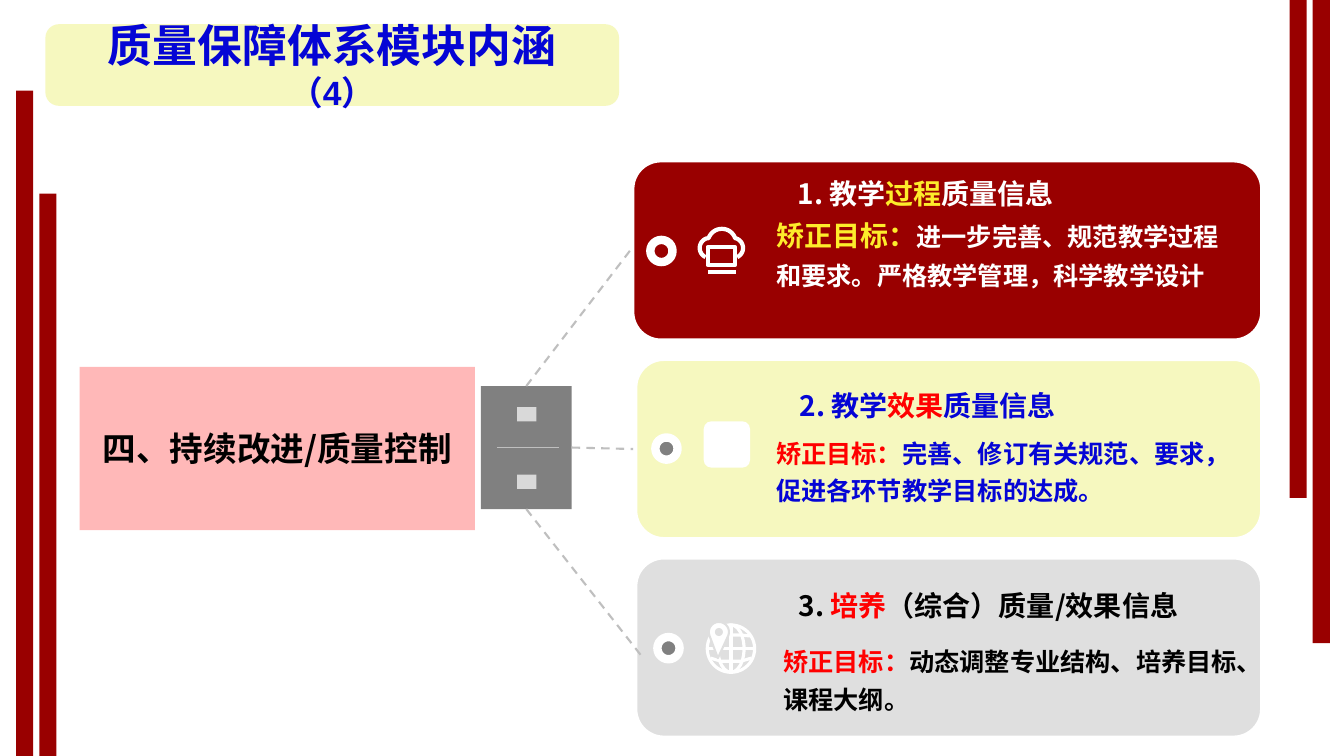
from math import cos, radians, sin

from lxml import etree
from pptx import Presentation
from pptx.dml.color import RGBColor
from pptx.enum.dml import MSO_LINE
from pptx.enum.shapes import MSO_CONNECTOR, MSO_SHAPE
from pptx.enum.text import MSO_ANCHOR, MSO_AUTO_SIZE, PP_ALIGN
from pptx.oxml.ns import qn
from pptx.util import Inches, Pt

RECT, ROUND, OVAL = MSO_SHAPE.RECTANGLE, MSO_SHAPE.ROUNDED_RECTANGLE, MSO_SHAPE.OVAL
STRAIGHT, DASH = MSO_CONNECTOR.STRAIGHT, MSO_LINE.DASH
MIDDLE, TOP, CENTER, LEFT = MSO_ANCHOR.MIDDLE, MSO_ANCHOR.TOP, PP_ALIGN.CENTER, PP_ALIGN.LEFT
FONT, TITLE_FONT = "Noto Sans CJK SC", "Arial"
WHITE, BLACK, RED, BLUE, YELLOW = "FFFFFF", "000000", "FF0000", "0505D5", "FDEC2B"
MAROON, CREAM, PINK, GREY, PALE, SILVER = "990000", "F6F8BF", "FFB8B8", "808080", "DFDFDF", "BFBFBF"

# Runs are (text, size, colour); boxes are (left, top, width, height) in inches
TITLE = [("质量保障体系模块内涵", 32, BLUE), ("（4）", 24, BLUE)]
TITLE_BOX = (0.45, 0.24, 5.69, 0.81)
TOPIC = [("四、持续改进/质量控制", 24, BLACK)]
SIDE_BARS = [(0.16, 0.9, 6.6), (0.39, 1.92, 5.58), (12.79, 0, 4.94), (13.02, 0, 6.38)]
CARDS = [
    dict(box=(6.25, 1.57, 6.29, 1.83), fill=MAROON, ring=(6.45, 2.38), dot=MAROON,
         head_box=(7.83, 1.62, 3.3, 0.59), body_box=(7.6, 2.04, 4.69, 0.9),
         head=[("1. 教学", 20, WHITE), ("过程", 20, YELLOW), ("质量信息", 20, WHITE)],
         body=[("矫正目标：", 20, YELLOW),
               ("进一步完善、规范教学过程和要求。严格教学管理，科学教学设计", 18, WHITE)]),
    dict(box=(6.28, 3.54, 6.26, 1.83), fill=CREAM, ring=(6.5, 4.34), dot=GREY,
         head_box=(7.85, 3.73, 3.3, 0.59), body_box=(7.6, 4.22, 4.94, 0.9),
         head=[("2. 教学", 20, BLUE), ("效果", 20, RED), ("质量信息", 20, BLUE)],
         body=[("矫正目标：", 18, RED),
               ("完善、修订有关规范、要求，促进各环节教学目标的达成。", 18, BLUE)]),
    dict(box=(6.28, 5.51, 6.26, 1.83), fill=PALE, ring=(6.52, 6.32), dot=GREY,
         head_box=(7.84, 5.71, 4.06, 0.59), body_box=(7.67, 6.29, 4.74, 0.9),
         head=[("3. ", 20, BLACK), ("培养", 20, RED), ("（综合）质量/效果信息", 20, BLACK)],
         body=[("矫正目标：", 18, RED), ("动态调整专业结构、培养目标、课程大纲。", 18, BLACK)]),
]

prs = Presentation()
prs.slide_width, prs.slide_height = Inches(13.33), Inches(7.5)
s = prs.slides.add_slide(prs.slide_layouts[5])


def rgb(value):
    return RGBColor.from_string(value)


def paint(shape, fill, line, width):
    shape.shadow.inherit = False
    if fill:
        shape.fill.solid()
        shape.fill.fore_color.rgb = rgb(fill)
    else:
        shape.fill.background()
    if line:
        shape.line.color.rgb = rgb(line)
        shape.line.width = Pt(width)
    else:
        shape.line.fill.background()
    return shape


def add_box(kind, box, fill=None, line=None, width=1):
    return paint(s.shapes.add_shape(kind, *map(Inches, box)), fill, line, width)


def add_path(points, fill=None, line=None, width=1, close=False):
    points = [(Inches(x), Inches(y)) for x, y in points]
    builder = s.shapes.build_freeform(*points[0])
    builder.add_line_segments(points[1:], close=close)
    return paint(builder.convert_to_shape(), fill, line, width)


def add_line(start, end, color, width, dash=None):
    line = s.shapes.add_connector(STRAIGHT, *map(Inches, (*start, *end)))
    line.line.color.rgb = rgb(color)
    line.line.width = Pt(width)
    if dash:
        line.line.dash_style = dash
    etree.SubElement(line._element.spPr, qn("a:effectLst"))
    return line


def arc(cx, cy, r, first, last):
    """Points along a circle, clockwise from the right, angles in degrees."""
    return [(cx + r * cos(radians(first + (last - first) * i / 16)),
             cy + r * sin(radians(first + (last - first) * i / 16))) for i in range(17)]


def write(shape, runs, font=FONT, anchor=MIDDLE, align=LEFT, wrap=True,
          margins=(0.1, 0.05), spacing=1.0):
    tf = shape.text_frame
    tf.word_wrap, tf.auto_size, tf.vertical_anchor = wrap, MSO_AUTO_SIZE.NONE, anchor
    tf.margin_left = tf.margin_right = Inches(margins[0])
    tf.margin_top = tf.margin_bottom = Inches(margins[1])
    p = tf.paragraphs[0]
    p.alignment, p.line_spacing = align, spacing
    for text, size, color in runs:
        r = p.add_run()
        r.text = text
        r.font.size, r.font.bold, r.font.name = Pt(size), True, font
        r.font.color.rgb = rgb(color)
        etree.SubElement(r._r.get_or_add_rPr(), qn("a:ea")).set("typeface", FONT)


def add_text(box, runs, **layout):
    write(s.shapes.add_textbox(*map(Inches, box)), runs, **layout)


def draw_hat_icon():
    crown = (arc(7.04, 2.46, 0.1, 115, 250) + arc(7.16, 2.41, 0.14, 200, 340)
             + arc(7.27, 2.46, 0.1, -70, 65))
    add_path(crown, line=WHITE, width=3)
    add_box(RECT, (7.02, 2.45, 0.27, 0.18), line=WHITE, width=3)
    add_line((7.02, 2.7), (7.3, 2.7), WHITE, 3)


def draw_globe_icon():
    for width in (0.47, 0.26):
        add_box(OVAL, (7.25 - width / 2, 6.2, width, 0.47), line=WHITE, width=2.25)
    add_line((7.25, 6.2), (7.25, 6.67), WHITE, 2.25)
    add_line((7.02, 6.43), (7.48, 6.43), WHITE, 2.25)
    for edge, middle in ((6.31, 6.3), (6.53, 6.56)):
        add_path([(7.05, edge), (7.15, middle), (7.35, middle), (7.45, edge)],
                 line=WHITE, width=2.25)
    add_path(arc(7.13, 6.27, 0.1, 160, 380) + [(7.12, 6.53)], WHITE, PALE, 1.5, close=True)
    add_box(OVAL, (7.09, 6.23, 0.08, 0.08), PALE)


for left, top, height in SIDE_BARS:
    add_box(RECT, (left, top, 0.17, height), MAROON)

cards = [add_box(ROUND, c["box"], c["fill"], WHITE, 6) for c in CARDS]
add_box(RECT, (0.79, 3.64, 3.92, 1.62), PINK)
plug = add_box(RECT, (4.77, 3.83, 0.9, 1.22), GREY)

to_process = add_line((5.22, 3.83), (6.25, 2.49), SILVER, 1.5, DASH)
to_effect = add_line((5.67, 4.44), (6.28, 4.44), SILVER, 1.5, DASH)
to_training = add_line((5.22, 5.05), (6.38, 6.53), SILVER, 1.5, DASH)
for link, side in ((to_process, 0), (to_effect, 3), (to_training, 2)):
    link.begin_connect(plug, side)
to_process.end_connect(cards[0], 1)
to_effect.end_connect(cards[1], 1)

for top in (4.04, 4.71):
    add_box(RECT, (5.13, top, 0.19, 0.14), "D9D9D9")
add_line((4.93, 4.44), (5.54, 4.44), SILVER, 1)
add_text((0.79, 3.93, 3.92, 1.03), TOPIC, align=CENTER, wrap=False, margins=(0.08, 0))

for c in CARDS:
    add_box(OVAL, (*c["ring"], 0.22, 0.22), c["dot"], WHITE, 6)
    add_text(c["head_box"], c["head"], wrap=False, margins=(0.08, 0))
    add_text(c["body_box"], c["body"], anchor=TOP, spacing=1.25)

draw_hat_icon()
add_box(ROUND, (6.98, 4.18, 0.46, 0.46), WHITE)
draw_globe_icon()

add_box(ROUND, TITLE_BOX, CREAM)
title = s.shapes.title
title.left, title.top, title.width, title.height = map(Inches, TITLE_BOX)
s.shapes._spTree.append(title._element)
write(title, TITLE, font=TITLE_FONT, align=CENTER, margins=(0.3, 0.05))

prs.save("out.pptx")
